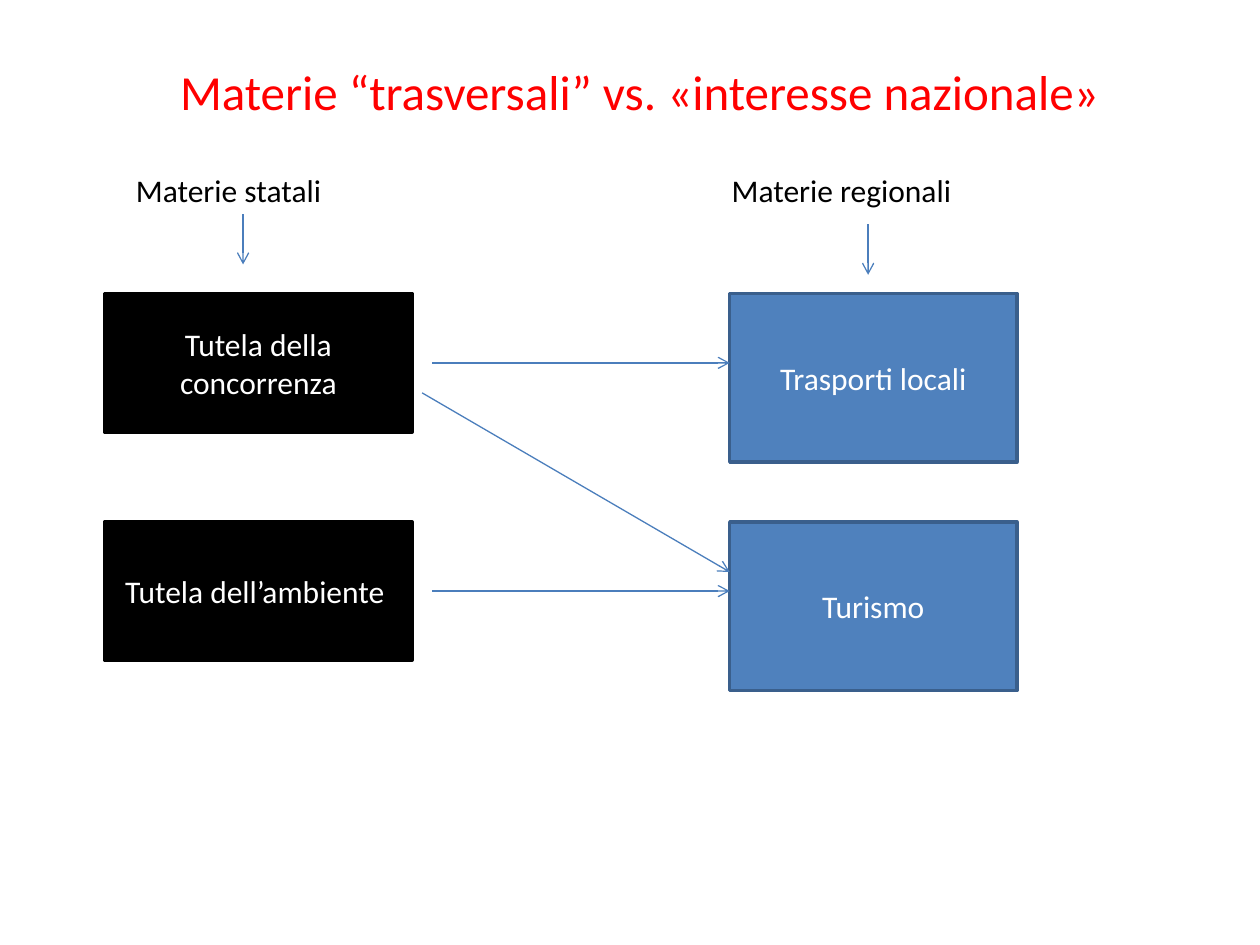
from lxml import etree
from pptx import Presentation
from pptx.dml.color import RGBColor
from pptx.enum.shapes import MSO_CONNECTOR, MSO_SHAPE
from pptx.enum.text import MSO_ANCHOR, PP_ALIGN
from pptx.oxml.ns import qn
from pptx.util import Cm, Pt

RED = RGBColor(0xFF, 0x00, 0x00)
BLACK = RGBColor(0x00, 0x00, 0x00)
WHITE = RGBColor(0xFF, 0xFF, 0xFF)
BLUE = RGBColor(0x4F, 0x81, 0xBD)
DARK_BLUE = RGBColor(0x3A, 0x5F, 0x8C)
ARROW_BLUE = RGBColor(0x4B, 0x7E, 0xBC)


def write(sp, text, color, size=18, align=PP_ALIGN.CENTER, anchor=MSO_ANCHOR.MIDDLE):
    tf = sp.text_frame
    tf.word_wrap = True
    tf.vertical_anchor = anchor
    p = tf.paragraphs[0]
    p.alignment = align
    r = p.add_run()
    r.text = text
    for name, value in {"name": "Calibri", "size": Pt(size)}.items():
        setattr(r.font, name, value)
    r.font.color.rgb = color


prs = Presentation()
prs.slide_width, prs.slide_height = Cm(25.4), Cm(19.05)
s = prs.slides.add_slide(prs.slide_layouts[6])

# Title and column headings
for text, x, y, w, h, fmt in [
    ("Materie “trasversali” vs. «interesse nazionale»", 1.09, 1.12, 23.6, 3.43,
     {"color": RED, "size": 28, "align": PP_ALIGN.CENTER}),
    ("Materie statali", 2.49, 3.33, 6.2, 1.02, {"color": BLACK, "align": PP_ALIGN.LEFT}),
    ("Materie regionali", 14.5, 3.33, 6.2, 1.02, {"color": BLACK, "align": PP_ALIGN.LEFT}),
]:
    sp = s.shapes.add_textbox(Cm(x), Cm(y), Cm(w), Cm(h))
    write(sp, text, anchor=MSO_ANCHOR.TOP, **fmt)

# State matters on the left, regional matters on the right
ROWS = (5.92, 10.52)
STATE_H = 2.79
REGION_X = 14.71
for x, w, h, fill, line, texts in [
    (2.11, 6.2, STATE_H, BLACK, BLACK, ("Tutela della concorrenza", "Tutela dell’ambiente ")),
    (REGION_X, 5.79, 3.4, BLUE, DARK_BLUE, ("Trasporti locali", "Turismo")),
]:
    for y, text in zip(ROWS, texts):
        sp = s.shapes.add_shape(MSO_SHAPE.RECTANGLE, Cm(x), Cm(y), Cm(w), Cm(h))
        sp.shadow.inherit = False
        sp.fill.solid()
        sp.fill.fore_color.rgb = fill
        sp.line.color.rgb = line
        sp.line.width = Pt(2)
        write(sp, text, WHITE)

# Arrows: under the headings, along each row, and across the rows
arrows = [(4.9, 4.32, 4.9, 5.33), (17.5, 4.52, 17.5, 5.54)]
arrows += [(8.71, y + STATE_H / 2, REGION_X, y + STATE_H / 2) for y in ROWS]
arrows.append((8.51, 7.92, REGION_X, 11.53))
for points in arrows:
    cxn = s.shapes.add_connector(MSO_CONNECTOR.STRAIGHT, *map(Cm, points))
    cxn.line.color.rgb = ARROW_BLUE
    cxn.line.width = Pt(0.75)
    etree.SubElement(cxn.line._get_or_add_ln(), qn("a:tailEnd"), type="arrow")
    etree.SubElement(cxn._element.spPr, qn("a:effectLst"))

prs.save("out.pptx")
